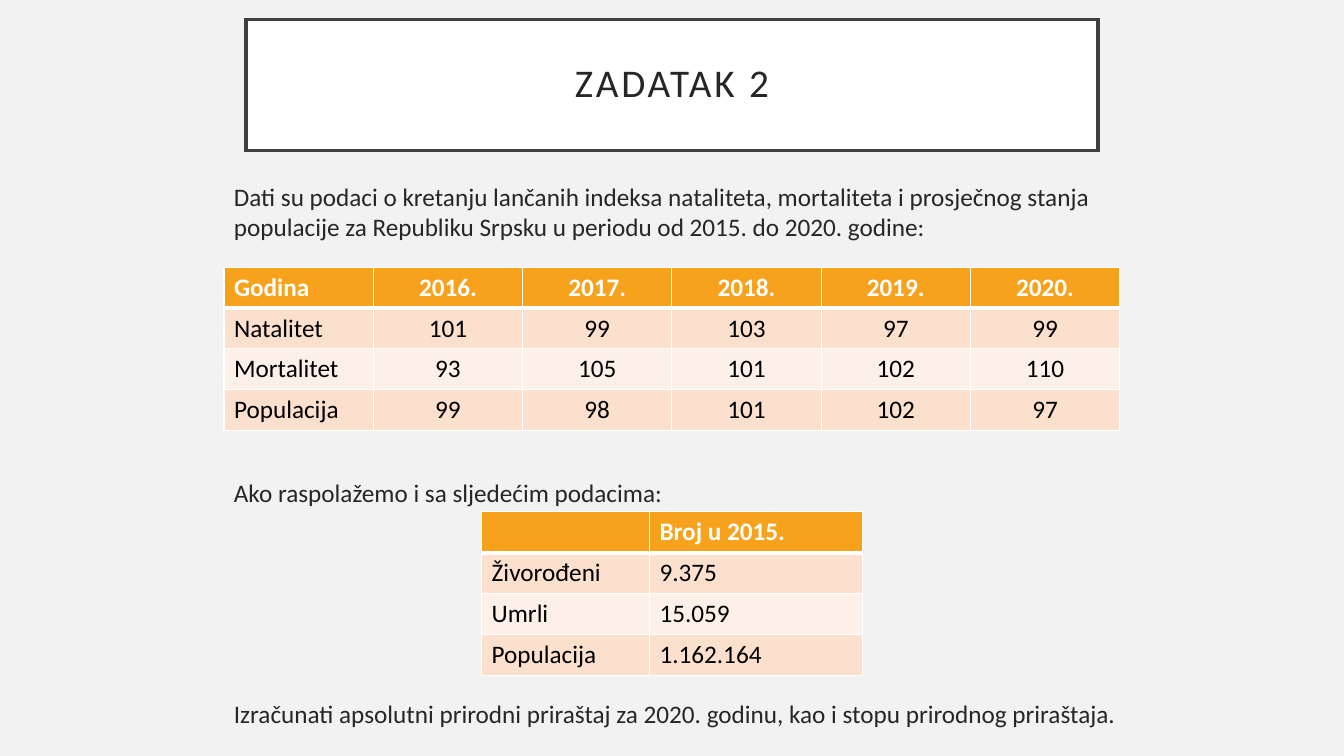
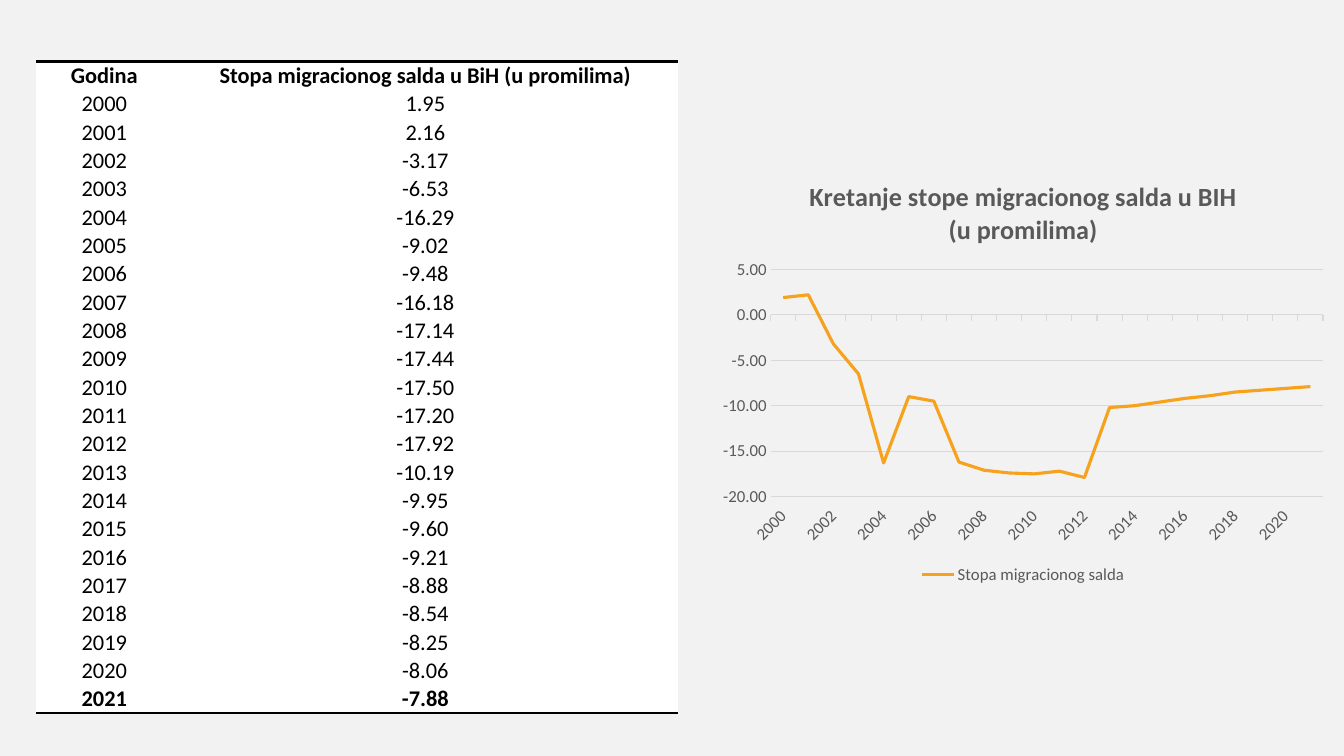
import dataclasses

import lxml.etree
import pptx
import pptx.chart.data
import pptx.dml.color
import pptx.enum.chart
import pptx.enum.text
import pptx.oxml
import pptx.oxml.ns
import pptx.util

Pt = pptx.util.Pt
qn = pptx.oxml.ns.qn
PP_ALIGN = pptx.enum.text.PP_ALIGN
MSO_ANCHOR = pptx.enum.text.MSO_ANCHOR


@dataclasses.dataclass(frozen=True)
class Theme:
    font: str = "Calibri"
    background: str = "F2F2F2"
    white: str = "FFFFFF"
    black: str = "000000"
    text: str = "262626"
    frame: str = "404040"
    accent: str = "F6A21D"
    bands: tuple = ("FBE0CD", "FDF0E8")
    chart_text: str = "595959"
    grid: str = "D9D9D9"
    title_size: float = 28
    chart_title_size: float = 18.7
    body_size: float = 18
    data_size: float = 16
    axis_size: float = 12


@dataclasses.dataclass(frozen=True)
class Box:
    x: float
    y: float
    w: float
    h: float

    def inner(self, dx, dy, w, h):
        return Box(self.x + dx, self.y + dy, w, h)

    def lengths(self):
        return Pt(self.x), Pt(self.y), Pt(self.w), Pt(self.h)


THEME = Theme()
NO_TABLE_STYLE = "{2D5ABB26-0587-4C30-8999-92F81FD0307C}"

INDEX_ROWS = [
    ["Godina", "2016.", "2017.", "2018.", "2019.", "2020."],
    ["Natalitet", "101", "99", "103", "97", "99"],
    ["Mortalitet", "93", "105", "101", "102", "110"],
    ["Populacija", "99", "98", "101", "102", "97"],
]
COUNT_ROWS = [
    ["", "Broj u 2015."],
    ["Živorođeni", "9.375"],
    ["Umrli", "15.059"],
    ["Populacija", "1.162.164"],
]
FIRST_YEAR = 2000
MIGRATION_RATES = [
    1.95, 2.16, -3.17, -6.53, -16.29, -9.02, -9.48, -16.18, -17.14, -17.44, -17.50,
    -17.20, -17.92, -10.19, -9.95, -9.60, -9.21, -8.88, -8.54, -8.25, -8.06, -7.88,
]
CHART_RATES = [
    1.9, 2.2, -3.2, -6.5, -16.3, -9, -9.5, -16.2, -17.1, -17.4, -17.5,
    -17.2, -17.9, -10.2, -10, -9.6, -9.2, -8.9, -8.5, -8.3, -8.1, -7.9,
]
YEARS = [str(FIRST_YEAR + i) for i in range(len(MIGRATION_RATES))]


def rgb(color):
    return pptx.dml.color.RGBColor.from_string(color)


def set_fill(fill, color):
    fill.solid()
    fill.fore_color.rgb = rgb(color)


def set_line(line, color, width):
    set_fill(line.fill, color)
    line.width = Pt(width)


def set_font(font, size, color, bold=False):
    font.name = THEME.font
    font.size = Pt(size)
    font.bold = bold
    font.color.rgb = rgb(color)


def set_borders(cell, color, **widths):
    tc_pr = cell._tc.get_or_add_tcPr()
    sides = [side for side in "LRTB" if side in widths]
    for i, side in enumerate(sides):
        ln = lxml.etree.Element(qn(f"a:ln{side}"), w=str(Pt(widths[side])))
        solid = lxml.etree.SubElement(ln, qn("a:solidFill"))
        lxml.etree.SubElement(solid, qn("a:srgbClr"), val=color)
        tc_pr.insert(i, ln)


def add_plain_table(s, box, rows, widths):
    table = s.shapes.add_table(len(rows), len(widths), *box.lengths()).table
    table._tbl.tblPr.find(qn("a:tableStyleId")).text = NO_TABLE_STYLE
    for column, width in zip(table.columns, widths):
        column.width = Pt(width)
    for row, texts in zip(table.rows, rows):
        row.height = Pt(box.h / len(rows))
        for cell, text in zip(row.cells, texts):
            cell.text_frame.text = text
    return table


def style_cell(cell, fill, size, color, bold, align):
    set_fill(cell.fill, fill)
    p = cell.text_frame.paragraphs[0]
    p.alignment = align
    for r in p.runs:
        set_font(r.font, size, color, bold)


def add_banded_table(s, box, rows, widths, value_align):
    table = add_plain_table(s, box, rows, widths)
    for i, row in enumerate(table.rows):
        header = i == 0
        fill = THEME.accent if header else THEME.bands[(i - 1) % 2]
        color = THEME.white if header else THEME.black
        for j, cell in enumerate(row.cells):
            align = value_align if j else PP_ALIGN.LEFT
            style_cell(cell, fill, THEME.body_size, color, header, align)
            set_borders(cell, THEME.white, L=1, R=1, T=3 if i == 1 else 1, B=3 if header else 1)


def add_rate_table(s, box):
    rows = [["Godina", "Stopa migracionog salda u BiH (u promilima)"]]
    rows += [[year, f"{rate:.2f}"] for year, rate in zip(YEARS, MIGRATION_RATES)]
    year_width = 97.2
    table = add_plain_table(s, box, rows, [year_width, box.w - year_width])
    last = len(rows) - 1
    for i, row in enumerate(table.rows):
        for cell in row.cells:
            style_cell(cell, THEME.white, THEME.data_size, THEME.black, i in (0, last), PP_ALIGN.CENTER)
            cell.vertical_anchor = MSO_ANCHOR.MIDDLE
            cell.margin_left = cell.margin_right = cell.margin_top = Pt(0.7)
            cell.margin_bottom = Pt(0)
            if i == 0:
                set_borders(cell, THEME.black, T=2)
            elif i == last:
                set_borders(cell, THEME.black, B=2)


def add_title(s, box, text):
    sp = s.shapes.title
    sp.left, sp.top, sp.width, sp.height = box.lengths()
    set_fill(sp.fill, THEME.white)
    set_line(sp.line, THEME.frame, 2.5)
    lxml.etree.SubElement(sp.line._get_or_add_ln(), qn("a:miter"), lim="800000")
    tf = sp.text_frame
    tf.text = text
    tf.word_wrap = True
    tf.auto_size = pptx.enum.text.MSO_AUTO_SIZE.NONE
    tf.vertical_anchor = MSO_ANCHOR.MIDDLE
    tf.margin_left = tf.margin_right = tf.margin_top = tf.margin_bottom = Pt(14.4)
    p = tf.paragraphs[0]
    p.alignment = PP_ALIGN.CENTER
    p.line_spacing = 0.9
    r = p.runs[0]
    set_font(r.font, THEME.title_size, THEME.text)
    r._r.get_or_add_rPr().set("spc", "200")


def add_text(s, box, text):
    tf = s.shapes.add_textbox(*box.lengths()).text_frame
    tf.word_wrap = True
    tf.text = text
    set_font(tf.paragraphs[0].runs[0].font, THEME.body_size, THEME.text)


def set_plot_layout(chart, x, y, w, h):
    plot_area = chart._chartSpace.chart.plotArea
    for old in plot_area.findall(qn("c:layout")):
        plot_area.remove(old)
    layout = lxml.etree.Element(qn("c:layout"))
    manual = lxml.etree.SubElement(layout, qn("c:manualLayout"))
    settings = {"layoutTarget": "inner", "xMode": "edge", "yMode": "edge", "x": x, "y": y, "w": w, "h": h}
    for tag, value in settings.items():
        lxml.etree.SubElement(manual, qn(f"c:{tag}"), val=str(value))
    plot_area.insert(0, layout)


def style_category_axis(axis):
    axis.tick_label_position = pptx.enum.chart.XL_TICK_LABEL_POSITION.LOW
    axis.major_tick_mark = pptx.enum.chart.XL_TICK_MARK.OUTSIDE
    axis.has_major_gridlines = False
    set_line(axis.format.line, THEME.grid, 0.75)
    set_font(axis.tick_labels.font, THEME.axis_size, THEME.chart_text)
    axis._element.find(qn("c:txPr")).find(qn("a:bodyPr")).set("rot", "-2700000")
    skip = lxml.etree.Element(qn("c:tickLblSkip"), val="2")
    axis._element.find(qn("c:noMultiLvlLbl")).addprevious(skip)


def style_value_axis(axis):
    axis.minimum_scale, axis.maximum_scale, axis.major_unit = -20, 5, 5
    axis.major_tick_mark = pptx.enum.chart.XL_TICK_MARK.NONE
    axis.format.line.fill.background()
    set_line(axis.major_gridlines.format.line, THEME.grid, 0.75)
    set_font(axis.tick_labels.font, THEME.axis_size, THEME.chart_text)
    axis.tick_labels.number_format = "0.00"
    axis.tick_labels.number_format_is_linked = False


def add_rate_chart(s, box):
    data = pptx.chart.data.CategoryChartData(number_format="0.00")
    data.categories = YEARS
    data.add_series("Stopa migracionog salda", CHART_RATES)
    chart = s.shapes.add_chart(pptx.enum.chart.XL_CHART_TYPE.LINE, *box.lengths(), data).chart
    set_font(chart.font, 10, THEME.black)
    chart.has_title = True
    tf = chart.chart_title.text_frame
    tf.text = "Kretanje stope migracionog salda u BIH\n(u promilima)"
    for p in tf.paragraphs:
        set_font(p.runs[0].font, THEME.chart_title_size, THEME.chart_text, True)
    chart.chart_title.include_in_layout = False
    chart.has_legend = True
    chart.legend.position = pptx.enum.chart.XL_LEGEND_POSITION.BOTTOM
    chart.legend.include_in_layout = False
    set_font(chart.legend.font, THEME.axis_size, THEME.chart_text)
    plot = chart.plots[0]
    plot.vary_by_categories = False
    series = plot.series[0]
    series.smooth = False
    series.marker.style = pptx.enum.chart.XL_MARKER_STYLE.NONE
    set_line(series.format.line, THEME.accent, 2.25)
    style_category_axis(chart.category_axis)
    style_value_axis(chart.value_axis)
    set_plot_layout(chart, 0.096, 0.251, 0.884, 0.533)


def add_exercise(s, box):
    paragraphs = [
        (0, 52, "Dati su podaci o kretanju lančanih indeksa nataliteta, mortaliteta i prosječnog "
                "stanja populacije za Republiku Srpsku u periodu od 2015. do 2020. godine:"),
        (211.4, 30, "Ako raspolažemo i sa sljedećim podacima:"),
        (369.4, 30, "Izračunati apsolutni prirodni priraštaj za 2020. godinu, "
                    "kao i stopu prirodnog priraštaja."),
    ]
    for dy, h, text in paragraphs:
        add_text(s, box.inner(0, dy, box.w, h), text)
    index_widths = [106.65] * len(INDEX_ROWS[0])
    count_widths = [119.9, 152.1]
    add_banded_table(s, box.inner(0, 64.8, sum(index_widths), 116.9), INDEX_ROWS, index_widths,
                     PP_ALIGN.CENTER)
    add_banded_table(s, box.inner(184, 239.6, sum(count_widths), 116.8), COUNT_ROWS, count_widths,
                     PP_ALIGN.LEFT)


def exercise_slide(prs):
    s = prs.slides.add_slide(prs.slide_layouts[5])
    add_title(s, Box(175.7, 14, 608.7, 93.4), "ZADATAK 2")
    add_exercise(s, Box(160, 126, 652, 414))


def migration_slide(prs):
    s = prs.slides.add_slide(prs.slide_layouts[6])
    add_rate_table(s, Box(25.9, 43.8, 458.6, 465.8))
    add_rate_chart(s, Box(507.6, 116, 446.4, 304.6))


def main():
    prs = pptx.Presentation()
    prs.slide_width, prs.slide_height = Pt(960), Pt(540)
    set_fill(prs.slide_master.background.fill, THEME.background)
    exercise_slide(prs)
    migration_slide(prs)
    prs.save("out.pptx")


if __name__ == "__main__":
    main()
